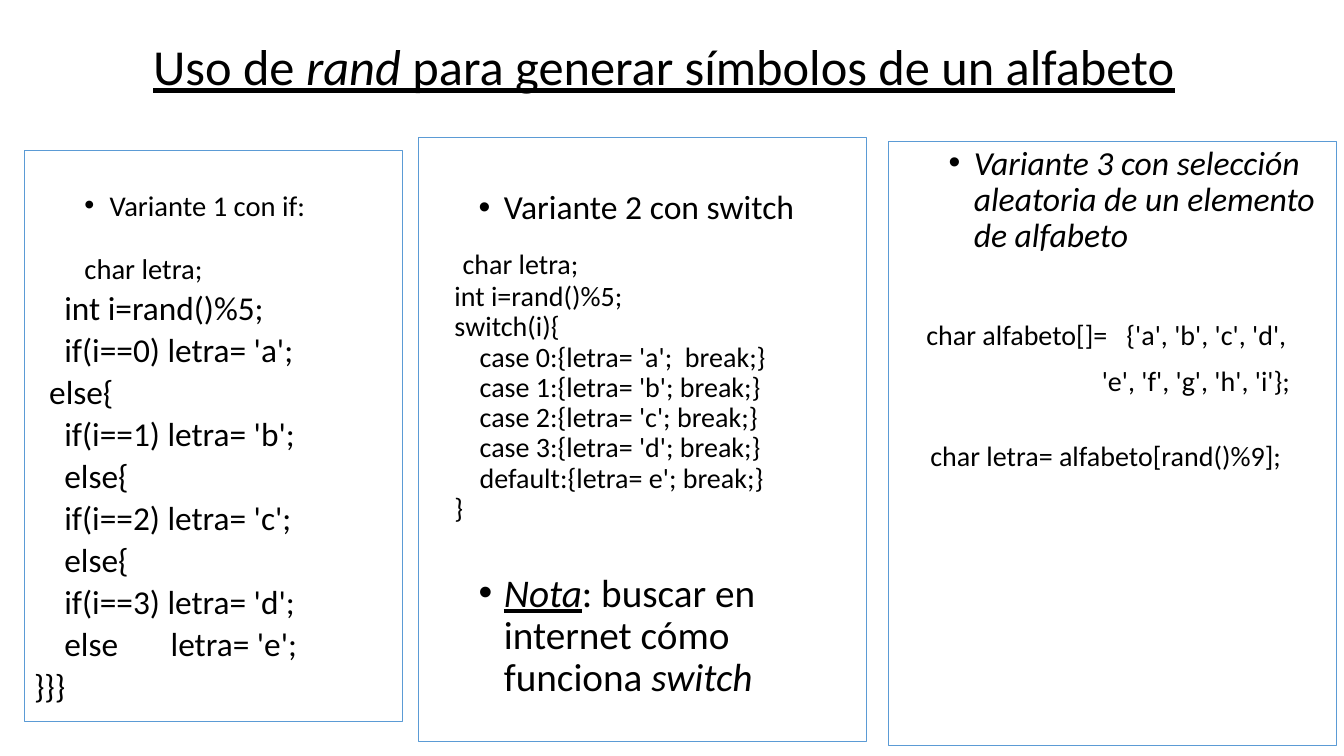
from lxml import etree
from pptx import Presentation
from pptx.dml.color import RGBColor
from pptx.enum.shapes import MSO_SHAPE
from pptx.enum.text import MSO_ANCHOR, PP_ALIGN
from pptx.oxml.ns import qn
from pptx.util import Inches, Pt

RECTANGLE = MSO_SHAPE.RECTANGLE
TOP, MIDDLE = MSO_ANCHOR.TOP, MSO_ANCHOR.MIDDLE
LEFT = PP_ALIGN.LEFT
WIDTH, HEIGHT = Inches(13.33), Inches(7.5)
INK, PAPER, BORDER = "000000", "FFFFFF", "5B9BD5"
ITALIC = {"italic": True}
UNDERLINED = {"underline": True}
BOTH = {"italic": True, "underline": True}


def color(value):
    return RGBColor.from_string(value)


def set_all(target, values):
    for name, value in values.items():
        setattr(target, name, value)


def place(left, top, width, height):
    return [round(share * size / 100) for share, size in
            zip((left, top, width, height), (WIDTH, HEIGHT) * 2)]


def prepare_frame(frame, anchor, inset):
    set_all(frame, {"word_wrap": True, "vertical_anchor": anchor,
                    "margin_left": Inches(0.1), "margin_right": Inches(0.1),
                    "margin_top": Inches(inset), "margin_bottom": Inches(0.05)})


def add_para(frame, spans, size, spacing, before=0, indent=0, bullet=False):
    first = frame.paragraphs[0]
    para = frame.add_paragraph() if first.runs else first
    set_all(para, {"alignment": LEFT, "line_spacing": spacing,
                   "space_before": Pt(before), "space_after": Pt(0)})
    properties = para._p.get_or_add_pPr()
    properties.set("marL", str(Inches(indent)))
    properties.set("indent", str(Inches(-0.25 if bullet else 0)))
    if bullet:
        etree.SubElement(properties, qn("a:buFont")).set("typeface", "Arial")
        etree.SubElement(properties, qn("a:buChar")).set("char", "•")
    else:
        etree.SubElement(properties, qn("a:buNone"))
    for text, style in spans:
        span = para.add_run()
        span.text = text
        set_all(span.font, {"name": "Calibri", "size": Pt(size), **style})
        span.font.color.rgb = color(INK)


def add_title(page, spans):
    box = page.shapes.add_textbox(*place(10.65, 2.93, 85.97, 12.53))
    prepare_frame(box.text_frame, MIDDLE, 0.05)
    add_para(box.text_frame, spans, 36, 0.9)


def add_panel(page, area, inset):
    box = page.shapes.add_shape(RECTANGLE, *place(*area))
    box.shadow.inherit = False
    box.fill.background()
    box.line.color.rgb = color(BORDER)
    box.line.width = Pt(0.75)
    prepare_frame(box.text_frame, TOP, inset)
    return box.text_frame


def add_bullet(frame, spans, size, spacing, before=5):
    add_para(frame, spans, size, spacing, before, 0.75, True)


def add_code(frame, lines, size, spacing):
    for text, indent, before in lines:
        add_para(frame, [(text, {})], size, spacing, before, indent)


def add_if_variant(page):
    frame = add_panel(page, (1.8, 19.87, 28.13, 75.6), 0.47)
    add_bullet(frame, [("Variante 1 con if:", {})], 20.4, 0.7)
    add_code(frame, [("char letra;", 0.5, 27.4)], 20.4, 0.7)
    lines = [("int i=rand()%5;", 0.3), ("if(i==0) letra= 'a';", 0.3),
             ("else{", 0.15), ("if(i==1) letra= 'b';", 0.3),
             ("else{", 0.3), ("if(i==2) letra= 'c';", 0.3),
             ("else{", 0.3), ("if(i==3) letra= 'd';", 0.3),
             ("else       letra= 'e';", 0.3), ("}}}", 0)]
    add_code(frame, [(text, indent, 10) for text, indent in lines], 23.8, 0.7)


def add_switch_variant(page):
    frame = add_panel(page, (31.13, 18.13, 33.38, 80), 0.53)
    add_bullet(frame, [("Variante 2 con switch", {})], 24, 0.9)
    cases = ["case 0:{letra= 'a';  break;}", "case 1:{letra= 'b'; break;}",
             "case 2:{letra= 'c'; break;}", "case 3:{letra= 'd'; break;}",
             "default:{letra= e'; break;}"]
    add_code(frame, [("char letra;", 0.34, 16.7), ("int i=rand()%5;", 0.26, 1.5),
                     ("switch(i){", 0.26, 0),
                     *((case, 0.51, 0) for case in cases),
                     ("}", 0.26, 0)], 20, 0.9)
    add_bullet(frame, [("Nota", BOTH), (": buscar en internet cómo funciona ", {}),
                       ("switch", ITALIC)], 28, 0.9, 35)


def add_array_variant(page):
    frame = add_panel(page, (66.09, 18.67, 33.38, 80), 0.05)
    heading = "Variante 3 con selección aleatoria de un elemento de alfabeto"
    add_bullet(frame, [(heading, ITALIC)], 24, 0.9)
    add_code(frame, [("char alfabeto[]=   {'a', 'b', 'c', 'd',", 0.28, 47.4),
                     ("'e', 'f', 'g', 'h', 'i'};", 2.02, 11),
                     ("char letra= alfabeto[rand()%9];", 0.32, 32)], 20, 0.9)


def main():
    deck = Presentation()
    set_all(deck, {"slide_width": WIDTH, "slide_height": HEIGHT})
    page = deck.slides.add_slide(deck.slide_layouts[6])
    page.background.fill.solid()
    page.background.fill.fore_color.rgb = color(PAPER)
    add_title(page, [("Uso de ", UNDERLINED), ("rand", BOTH),
                     (" para generar símbolos de un alfabeto", UNDERLINED)])
    add_if_variant(page)
    add_switch_variant(page)
    add_array_variant(page)
    deck.save("out.pptx")


if __name__ == "__main__":
    main()
